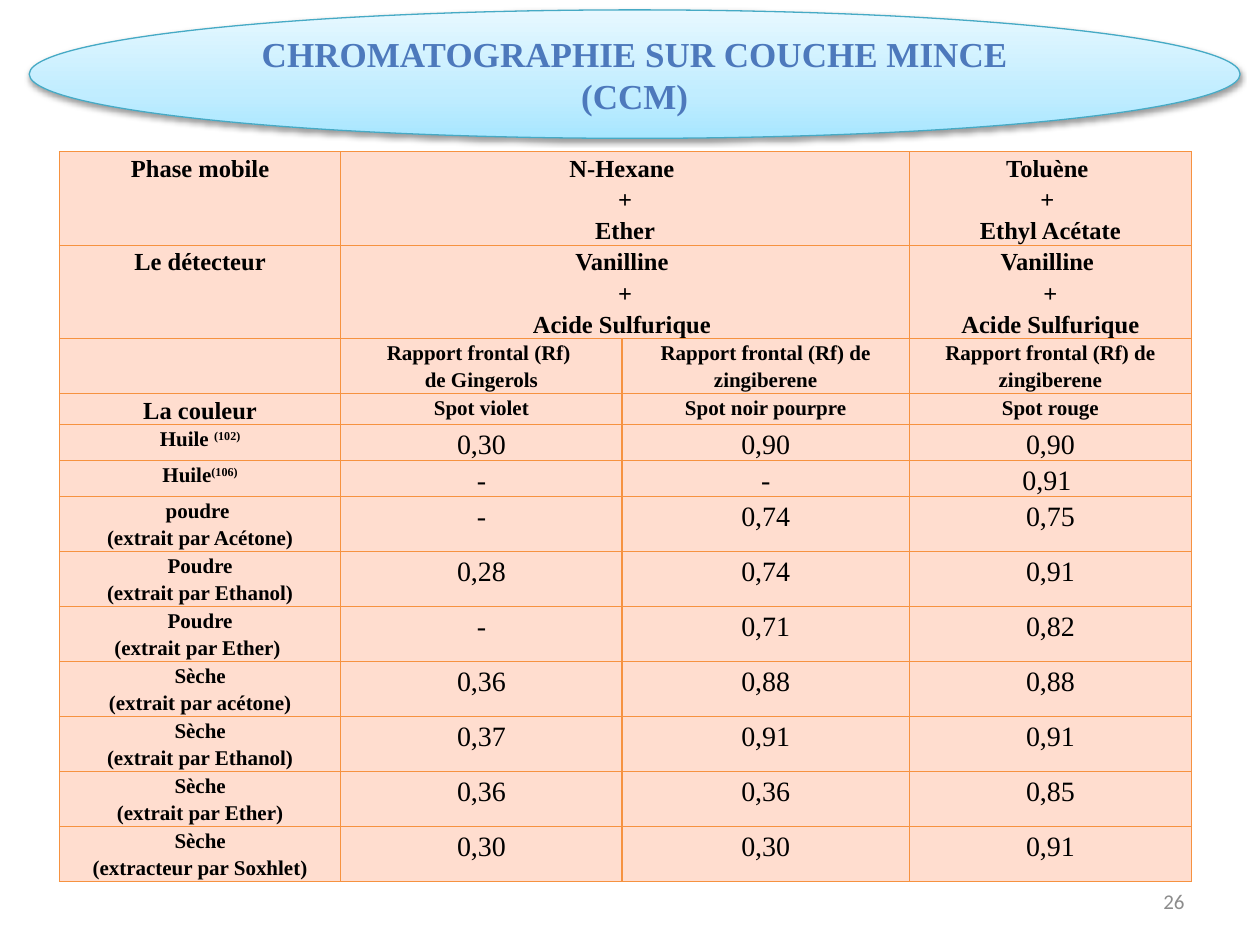
from collections import namedtuple
from dataclasses import dataclass

from lxml import etree
from pptx import Presentation
from pptx.dml.color import RGBColor
from pptx.enum import shapes, text
from pptx.oxml import parse_xml
from pptx.oxml.ns import nsdecls, qn
from pptx.util import Cm, Pt

Box = namedtuple("Box", "left top width height")


@dataclass(frozen=True)
class Theme:
    serif: str = "Times New Roman"
    sans: str = "Calibri"
    ink: str = "000000"
    title: str = "4D79BC"
    rim: str = "46AAC5"
    glow: tuple = ((0, "A7E6FF"), (35, "C1EDFF"), (100, "E7F8FF"))
    cell: str = "FFDDCF"
    rule: str = "F69240"
    muted: str = "8C8C8C"
    big: int = 20
    value: int = 16
    head: int = 14
    small: int = 12
    line: float = 0.75


T = Theme()

WIDTHS = [5.67, 5.67, 5.79, 5.69]
HEIGHTS = [1.68, 1.37, 1.11] + [0.56] * 3 + [1.11] * 7
HEADS = 4  # rows above the measured values

# A caret starts a superscript.
ROWS = [
    ["Phase mobile", "N-Hexane \n+\nEther", "", "Toluène \n+ \nEthyl Acétate"],
    ["Le détecteur", "Vanilline \n+\nAcide Sulfurique ", "",
     "Vanilline \n+\nAcide Sulfurique"],
    ["", "Rapport frontal (Rf) \nde Gingerols",
     "Rapport frontal (Rf) de zingiberene",
     "Rapport frontal (Rf) de zingiberene"],
    ["La couleur", "Spot violet", "Spot noir pourpre", "Spot rouge"],
    ["Huile ^(102)", "0,30", "0,90", "0,90"],
    ["Huile^(106)", "-", "-", "0,91 "],
    ["poudre \n(extrait par Acétone)", "-", "0,74", "0,75"],
    ["Poudre\n(extrait par Ethanol)", "0,28", "0,74", "0,91"],
    ["Poudre\n(extrait par Ether) ", "-", "0,71", "0,82"],
    ["Sèche\n(extrait par acétone)", "0,36", "0,88", "0,88"],
    ["Sèche\n(extrait par Ethanol)", "0,37", "0,91", "0,91"],
    ["Sèche\n(extrait par Ether)", "0,36", "0,36", "0,85"],
    ["Sèche\n(extracteur par Soxhlet)", "0,30", "0,30", "0,91"],
]


def rgb(code):
    return RGBColor.from_string(code)


def style(frame, size, color, face=T.serif, bold=False,
          align=text.PP_ALIGN.CENTER, space=None):
    for par in frame.paragraphs:
        par.alignment = align
        par.line_spacing = space
        for run in par.runs:
            font = run.font
            font.name, font.size, font.bold = face, Pt(size), bold
            font.color.rgb = rgb(color)


def place(shape, box):
    shape.left, shape.top, shape.width, shape.height = map(Cm, box)


def shade(oval):
    """Give the oval its gradient and soft drop shadow."""
    props = oval.element.spPr
    stops = "".join(
        f'<a:gs pos="{pos * 1000}"><a:srgbClr val="{code}"/></a:gs>'
        for pos, code in T.glow)
    props.insert(2, parse_xml(
        f'<a:gradFill {nsdecls("a")} rotWithShape="1"><a:gsLst>{stops}</a:gsLst>'
        '<a:lin ang="16200000" scaled="0"/></a:gradFill>'))
    props.find(qn("a:effectLst")).append(parse_xml(
        f'<a:outerShdw {nsdecls("a")} blurRad="{Pt(3.1)}" dist="{Pt(1.6)}" '
        'dir="5400000" rotWithShape="0"><a:srgbClr val="000000">'
        '<a:alpha val="38000"/></a:srgbClr></a:outerShdw>'))


def banner(slide, box):
    oval = slide.shapes.add_shape(shapes.MSO_SHAPE.OVAL, *map(Cm, box))
    oval.shadow.inherit = False
    oval.line.color.rgb = rgb(T.rim)
    oval.line.width = Pt(T.line)
    shade(oval)
    title = slide.shapes.title
    oval.element.addnext(title.element)  # title in front of the oval

    inner = 0.71  # share of an oval taken by its inscribed rectangle
    edge = (1 - inner) / 2
    place(title, Box(box.left + box.width * edge, box.top + box.height * edge,
                     box.width * inner, box.height * inner))
    frame = title.text_frame
    frame.text = "CHROMATOGRAPHIE SUR COUCHE MINCE (CCM)"
    frame.word_wrap = True
    frame.auto_size = text.MSO_AUTO_SIZE.NONE
    frame.vertical_anchor = text.MSO_ANCHOR.MIDDLE
    style(frame, T.big, T.title, bold=True)


def border(cell):
    props = cell._tc.get_or_add_tcPr()
    for side in ("lnL", "lnR", "lnT", "lnB"):
        line = etree.SubElement(props, qn("a:" + side), w=str(Pt(T.line)))
        fill = etree.SubElement(line, qn("a:solidFill"))
        etree.SubElement(fill, qn("a:srgbClr"), val=T.rule)


def fill(cell, words, row, col):
    border(cell)
    cell.fill.solid()
    cell.fill.fore_color.rgb = rgb(T.cell)
    cell.margin_left = cell.margin_right = Cm(0.13)
    cell.margin_top = cell.margin_bottom = 0
    base, _, raised = words.partition("^")
    frame = cell.text_frame
    frame.text = base
    if raised:
        run = frame.paragraphs[-1].add_run()
        run.text = raised
        run._r.get_or_add_rPr().set("baseline", "30000")

    value = row >= HEADS and col > 0
    head = row < 2 or (row < HEADS and col == 0)
    size = T.value if value else T.head if head else T.small
    style(frame, size, T.ink, bold=not value, space=1.15)


def results(slide, box):
    grid = slide.shapes.add_table(len(ROWS), len(WIDTHS), *map(Cm, box)).table
    grid.first_row = grid.horz_banding = False
    for col, width in zip(grid.columns, WIDTHS):
        col.width = Cm(width)
    for row, height in zip(grid.rows, HEIGHTS):
        row.height = Cm(height)
    for r, row in enumerate(ROWS):
        for c, words in enumerate(row):
            fill(grid.cell(r, c), words, r, c)
    for r in range(2):
        grid.cell(r, 1).merge(grid.cell(r, 2))


def number(slide, box):
    frame = slide.shapes.add_textbox(*map(Cm, box)).text_frame
    frame.text = "26"
    frame.word_wrap = True
    frame.vertical_anchor = text.MSO_ANCHOR.MIDDLE
    style(frame, T.small, T.muted, T.sans, align=text.PP_ALIGN.RIGHT)


def main():
    deck = Presentation()
    deck.slide_width, deck.slide_height = Cm(25.4), Cm(19.05)
    slide = deck.slides.add_slide(deck.slide_layouts[5])
    results(slide, Box(1.2, 3.06, sum(WIDTHS), sum(HEIGHTS)))
    banner(slide, Box(0.59, 0.2, 24.41, 2.59))
    number(slide, Box(18.2, 17.66, 5.93, 1.01))
    deck.save("out.pptx")


if __name__ == "__main__":
    main()
